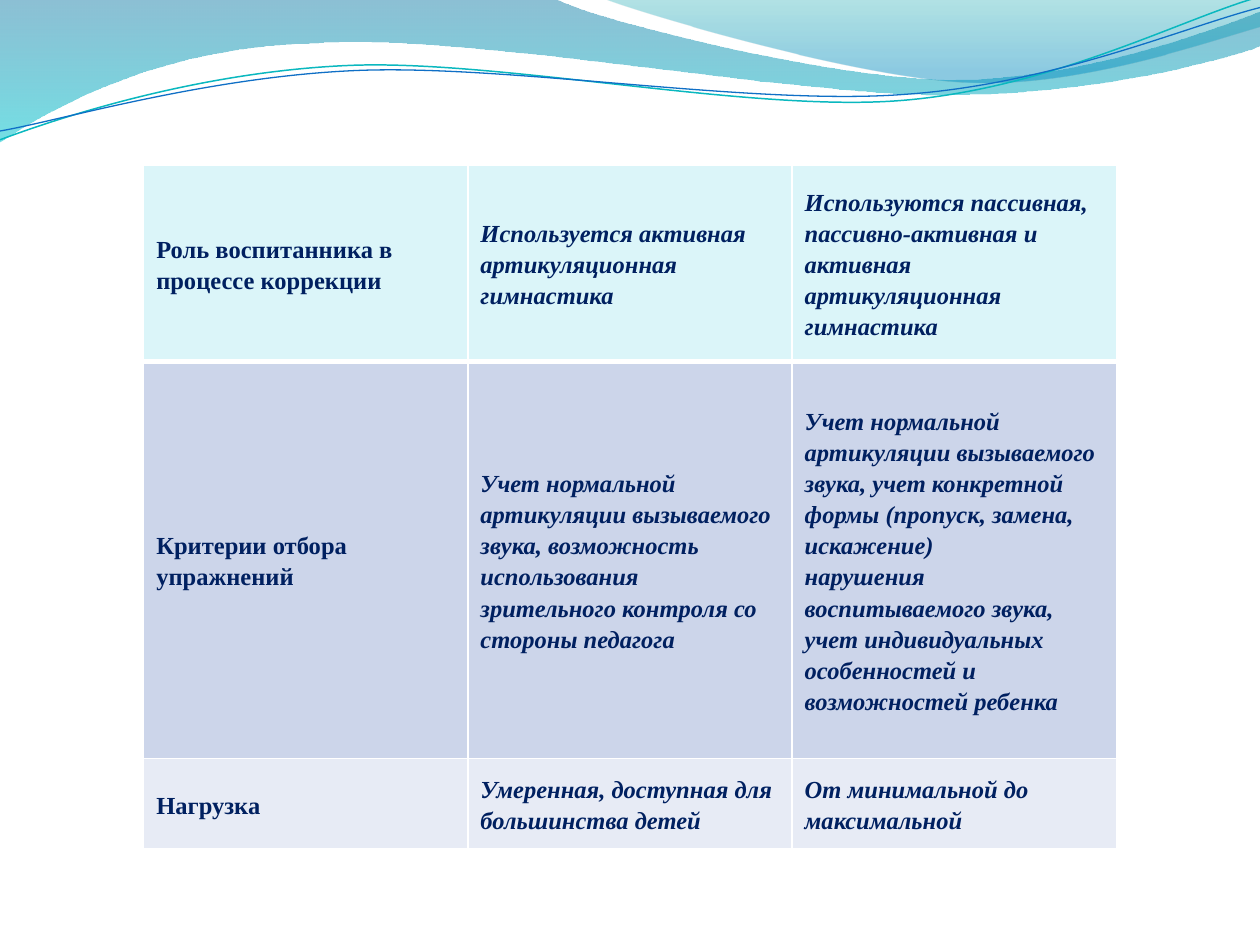
"""Build a slide with a wave banner and a table on speech correction."""
from copy import deepcopy

from lxml.etree import SubElement
from pptx import Presentation
from pptx.dml.color import RGBColor
from pptx.enum.text import MSO_ANCHOR
from pptx.oxml.ns import qn
from pptx.util import Inches, Pt

HUES = {
    "navy": "002060", "white": "FFFFFF",
    "head": "DBF5F9", "odd": "CCD5EA", "even": "E7EBF5",
    "deep": "0074A1", "aqua": "00C6CF", "teal": "00A1A9", "sky": "008BBF",
    "cyan": "0AB8BF", "blue": "0F6FC6",
}

BANDS = [
    ([[(0, 0)], [(4.4, -0.01)],
      [(4.76, 0.17), (6.64, 0.63), (7.58, 0.63)],
      [(8.53, 0.63), (9.58, 0.26), (10, 0.09)], [(10.01, 0.36)],
      [(9.83, 0.44), (8.7, 0.76), (7.46, 0.75)],
      [(6.22, 0.75), (3.82, 0.28), (2.57, 0.34)],
      [(1.29, 0.36), (0.46, 0.83), (-0.01, 1.13)], [(0, 0)]],
     [(0, "deep", 45), (1, "aqua", 55)]),
    ([[(4.79, -0.01)],
      [(5.09, 0.11), (6.82, 0.62), (7.69, 0.65)],
      [(8.56, 0.69), (9.61, 0.32), (10, 0.21)], [(10, 0)], [(4.79, -0.01)]],
     [(0, "teal", 30), (0.8, "sky", 45)]),
]

LINES = [
    ([[(0, 1.11)],
      [(0.48, 0.93), (1.58, 0.57), (2.77, 0.52)],
      [(3.95, 0.47), (5.93, 0.89), (7.13, 0.8)],
      [(8.33, 0.71), (9.38, 0.15), (9.98, -0.02)]], "cyan", 0.85),
    ([[(0, 1.04)],
      [(0.47, 0.96), (1.64, 0.61), (2.83, 0.56)],
      [(4.03, 0.51), (5.97, 0.84), (7.17, 0.75)],
      [(8.36, 0.67), (9.41, 0.21), (10, 0.06)]], "blue", 0.75),
]

ROWS = [
    (1.56, "head", [
        "Роль воспитанника в процессе коррекции",
        "Используется активная артикуляционная гимнастика",
        "Используются пассивная, пассивно-активная и активная "
        "артикуляционная гимнастика"]),
    (3.15, "odd", [
        "Критерии отбора упражнений",
        "Учет нормальной артикуляции вызываемого звука, возможность "
        "использования зрительного контроля со стороны педагога",
        "Учет нормальной артикуляции вызываемого звука, учет конкретной "
        "формы (пропуск, замена, искажение)\nнарушения воспитываемого "
        "звука, учет индивидуальных особенностей и возможностей ребенка"]),
    (0.72, "even", [
        "Нагрузка",
        "Умеренная, доступная для большинства детей",
        "От минимальной до максимальной"]),
]


def paint(name):
    """Return the named colour."""
    return RGBColor.from_string(HUES[name])


def bend(shape, parts):
    """Join each three points of a cubic part into one true curve."""
    legs = iter(list(shape._element.iter(qn("a:lnTo"))))
    for part in parts[1:]:
        group = [next(legs) for _ in part]
        if len(group) == 3:
            curve = group[0].getparent().makeelement(qn("a:cubicBezTo"))
            group[0].addprevious(curve)
            for leg in group:
                curve.append(leg[0])
                leg.getparent().remove(leg)


def add_wave(slide, parts, close):
    """Draw a curved outline without a shadow."""
    dots = [(Inches(x), Inches(y)) for part in parts for x, y in part]
    pen = slide.shapes.build_freeform(*dots[0])
    pen.add_line_segments(dots[1:], close=close)
    shape = pen.convert_to_shape()
    bend(shape, parts)
    shape.shadow.inherit = False
    return shape


def add_band(slide, parts, stops):
    """Draw a filled wave with a see-through gradient from top to bottom."""
    shape = add_wave(slide, parts, True)
    shape.line.fill.background()
    shape.fill.gradient()
    shape.fill.gradient_angle = 270
    for stop, (place, name, _) in zip(shape.fill.gradient_stops, stops):
        stop.position = place
        stop.color.rgb = paint(name)
    tints = shape._element.spPr.iter(qn("a:srgbClr"))
    for tint, (_, _, alpha) in zip(tints, stops):
        SubElement(tint, qn("a:alpha"), val=str(alpha * 1000))


def add_curve(slide, parts, name, width):
    """Draw an open wavy line."""
    shape = add_wave(slide, parts, False)
    shape.fill.background()
    shape.line.color.rgb = paint(name)
    shape.line.width = Pt(width)


def write(frame, text, size=14, name="navy", bold=True, italic=False):
    """Put formatted text into a frame."""
    para = frame.paragraphs[0]
    para.text = text
    para.line_spacing = 1.15
    for run in para.runs:
        font = run.font
        font.name, font.size = "Times New Roman", Pt(size)
        font.bold, font.italic = bold, italic
        font.color.rgb = paint(name)
    for gap in para._p.findall(qn("a:br")):
        gap.append(deepcopy(para.runs[0]._r.rPr))


def edge(cell, **widths):
    """Give a cell white borders, with widths in points by side."""
    for side in "LRTB":
        line = SubElement(cell._tc.get_or_add_tcPr(), qn(f"a:ln{side}"),
                          w=str(Pt(widths.get(side, 1))))
        fill = SubElement(line, qn("a:solidFill"))
        SubElement(fill, qn("a:srgbClr"), val=HUES["white"])


def add_grid(slide):
    """Add the table of criteria."""
    tall = sum(row[0] for row in ROWS)
    grid = slide.shapes.add_table(len(ROWS), 3, Inches(1.14), Inches(1.31),
                                  Inches(7.72), Inches(tall)).table
    for r, (high, hue, texts) in enumerate(ROWS):
        grid.rows[r].height = Inches(high)
        for c, text in enumerate(texts):
            cell = grid.cell(r, c)
            edge(cell, T=3 if r == 1 else 1, B=3 if r == 0 else 1)
            cell.fill.solid()
            cell.fill.fore_color.rgb = paint(hue)
            cell.vertical_anchor = MSO_ANCHOR.MIDDLE
            cell.margin_left = cell.margin_right = Inches(0.1)
            cell.margin_top = cell.margin_bottom = Inches(0.1)
            write(cell.text_frame, text, italic=c > 0)


def main():
    """Build and save the slide."""
    deck = Presentation()
    deck.slide_width, deck.slide_height = Inches(10), Inches(7.5)
    slide = deck.slides.add_slide(deck.slide_layouts[6])
    for band in BANDS:
        add_band(slide, *band)
    for line in LINES:
        add_curve(slide, *line)
    add_grid(slide)
    deck.save("out.pptx")


if __name__ == "__main__":
    main()
